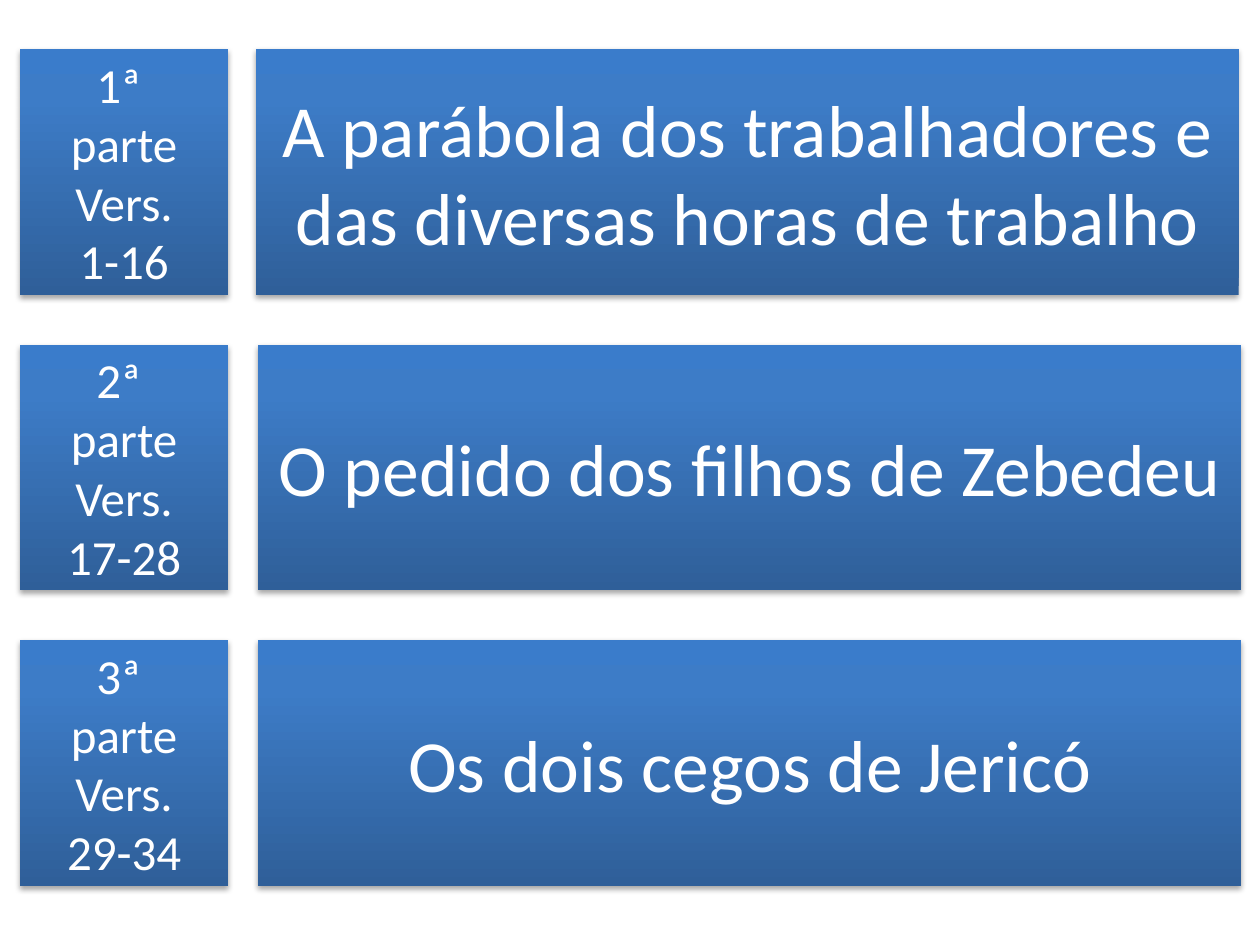
"""Build a slide that lists the three parts of a chapter with their verses."""
from lxml import etree
from pptx import Presentation
from pptx.dml.color import RGBColor
from pptx.enum import shapes, text
from pptx.oxml import ns
from pptx.util import Pt

PARTS = [
    ("1ª ", "1-16", "A parábola dos trabalhadores e das diversas horas de trabalho", 146.2),
    ("2ª ", "17-28", "O pedido dos filhos de Zebedeu", 147.6),
    ("3ª ", "29-34", "Os dois cegos de Jericó", 147.6),
]
FONT = "Calibri"
WHITE = RGBColor(0xFF, 0xFF, 0xFF)
SHADOW = RGBColor(0x00, 0x00, 0x00)
GRADIENT = [
    (0, RGBColor(0x2F, 0x5F, 0x99)),
    (80, RGBColor(0x3D, 0x7C, 0xC7)),
    (100, RGBColor(0x3A, 0x7C, 0xCB)),
]
TOP, PITCH, HEIGHT = 28.1, 168.8, 140.4
LABEL_LEFT, LABEL_WIDTH, LABEL_SIZE = 11.5, 118.8, 28
TITLE_WIDTH, TITLE_SIZE = 561.6, 42


def add_element(parent, tag, **attributes):
    return etree.SubElement(parent, ns.qn(tag), attributes)


def style_panel(panel):
    panel.line.fill.background()
    panel.fill.gradient()
    panel.fill.gradient_angle = 90
    properties = panel.element.spPr
    stops = properties.find(".//" + ns.qn("a:gsLst"))
    for old_stop in list(stops):
        stops.remove(old_stop)
    for percent, color in GRADIENT:
        stop = add_element(stops, "a:gs", pos=str(percent * 1000))
        add_element(stop, "a:srgbClr", val=str(color))

    panel.shadow.inherit = False
    effects = properties.find(ns.qn("a:effectLst"))
    shadow = add_element(effects, "a:outerShdw", blurRad=str(Pt(3.1)), dist=str(Pt(1.8)),
                         dir="5400000", rotWithShape="0")
    shade = add_element(shadow, "a:srgbClr", val=str(SHADOW))
    add_element(shade, "a:alpha", val="35000")


def add_panel(slide, left, top, width, lines, size):
    panel = slide.shapes.add_shape(shapes.MSO_SHAPE.RECTANGLE,
                                   Pt(left), Pt(top), Pt(width), Pt(HEIGHT))
    style_panel(panel)
    frame = panel.text_frame
    frame.word_wrap = True
    frame.vertical_anchor = text.MSO_ANCHOR.MIDDLE
    for index, line in enumerate(lines):
        paragraph = frame.add_paragraph() if index else frame.paragraphs[0]
        paragraph.alignment = text.PP_ALIGN.CENTER
        run = paragraph.add_run()
        run.text = line
        run.font.name = FONT
        run.font.size = Pt(size)
        run.font.color.rgb = WHITE


def main():
    deck = Presentation()
    deck.slide_width, deck.slide_height = Pt(720), Pt(540)
    slide = deck.slides.add_slide(deck.slide_layouts[6])
    for row, (ordinal, verses, title, title_left) in enumerate(PARTS):
        top = TOP + row * PITCH
        label = [ordinal, "parte", "Vers.", verses]
        add_panel(slide, LABEL_LEFT, top, LABEL_WIDTH, label, LABEL_SIZE)
        add_panel(slide, title_left, top, TITLE_WIDTH, [title], TITLE_SIZE)
    deck.save("out.pptx")


if __name__ == "__main__":
    main()
